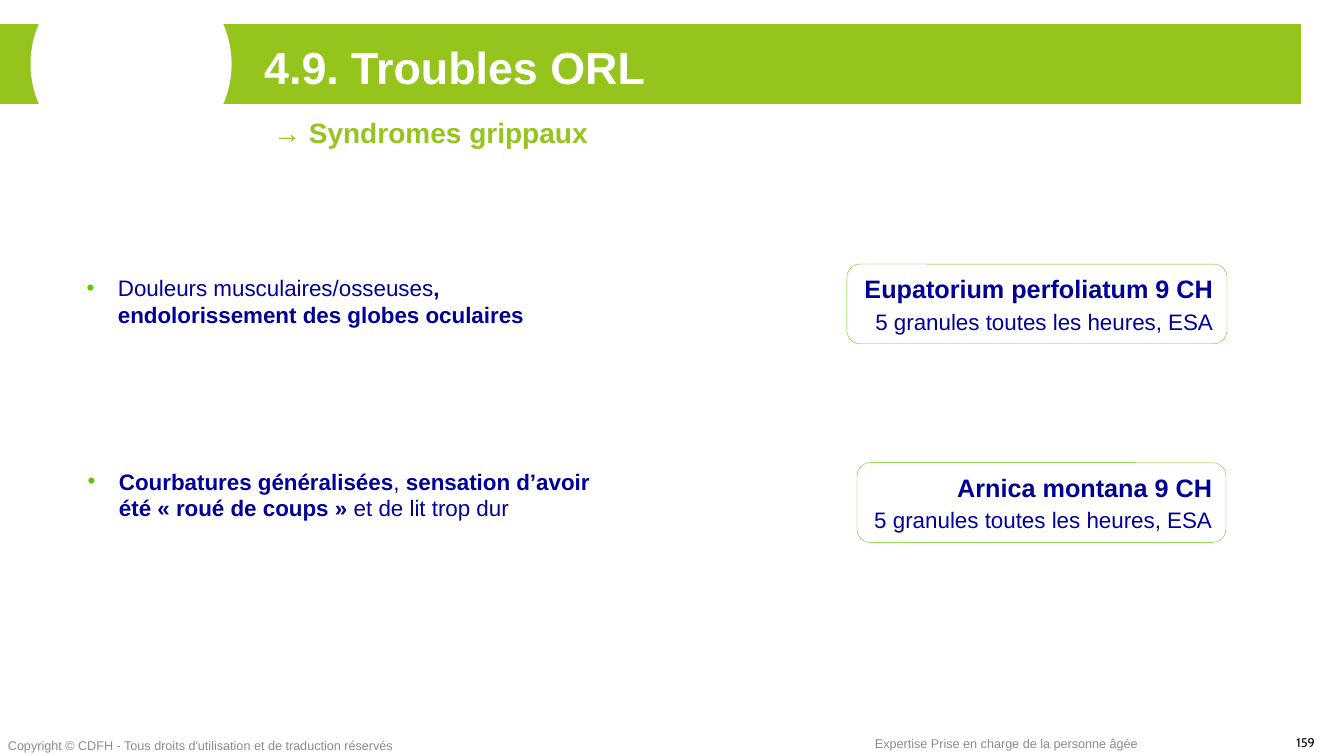
from lxml import etree
from pptx import Presentation
from pptx.dml.color import RGBColor
from pptx.enum.shapes import MSO_SHAPE
from pptx.enum.text import MSO_ANCHOR, MSO_AUTO_SIZE, PP_ALIGN
from pptx.oxml.ns import qn
from pptx.util import Inches, Pt

RECT, OVAL, ROUNDED = MSO_SHAPE.RECTANGLE, MSO_SHAPE.OVAL, MSO_SHAPE.ROUNDED_RECTANGLE
LEFT, RIGHT = PP_ALIGN.LEFT, PP_ALIGN.RIGHT
TOP, MIDDLE = MSO_ANCHOR.TOP, MSO_ANCHOR.MIDDLE
NO_AUTOFIT = MSO_AUTO_SIZE.NONE

COLORS = {"band": "95C41D", "accent": "62C400", "text": "000099",
          "footer": "8C8C8C", "white": "FFFFFF", "black": "000000"}
SLIDE_W, SLIDE_H = 13.33, 7.5
TWO_CONTENT = 3
HANGING = 0.31
DOSE = "5 granules toutes les heures, ESA"

# Each row: top of the symptom, its box, its runs (text, bold), then the remedy and its box
ROWS = [
    {"symptom": [("Douleurs musculaires/osseuses", False),
                 (", endolorissement des globes oculaires", True)],
     "symptom_box": (0.76, 2.67, 4.72, 0.64),
     "remedy": "Eupatorium perfoliatum 9 CH",
     "remedy_box": (8.4, 2.62, 3.77, 0.79)},
    {"symptom": [("Courbatures généralisées", True), (", ", False),
                 ("sensation d’avoir été « roué de coups » ", True),
                 ("et de lit trop dur", False)],
     "symptom_box": (0.77, 4.59, 5.44, 0.64),
     "remedy": "Arnica montana 9 CH",
     "remedy_box": (8.5, 4.59, 3.66, 0.79)},
]


def rgb(name):
    return RGBColor.from_string(COLORS[name])


def place(part, box):
    part.left, part.top, part.width, part.height = (Inches(v) for v in box)


def add_bullet(paragraph):
    properties = paragraph._p.get_or_add_pPr()
    properties.set("marL", str(Inches(HANGING)))
    properties.set("indent", str(-Inches(HANGING)))
    color = etree.SubElement(properties, qn("a:buClr"))
    etree.SubElement(color, qn("a:srgbClr"), val=COLORS["accent"])
    etree.SubElement(properties, qn("a:buFont"), typeface="Arial")
    etree.SubElement(properties, qn("a:buChar"), char="•")


def write(frame, runs, size=16, color="text", font="Arial", align=LEFT, anchor=TOP,
          wrap=True, bullet=False, before=0, spacing=1.0, new_paragraph=False):
    """Write runs of (text, bold) as one paragraph of the frame."""
    frame.auto_size = NO_AUTOFIT
    frame.word_wrap = wrap
    frame.vertical_anchor = anchor
    paragraph = frame.add_paragraph() if new_paragraph else frame.paragraphs[0]
    if bullet:
        add_bullet(paragraph)
    paragraph.alignment = align
    paragraph.space_before = Pt(before)
    paragraph.line_spacing = spacing
    for text, bold in runs:
        run = paragraph.add_run()
        run.text = text
        run.font.name, run.font.size, run.font.bold = font, Pt(size), bold
        run.font.color.rgb = rgb(color)


def add_panel(slide, kind, box, line, line_width, fill=None):
    panel = slide.shapes.add_shape(kind, *(Inches(v) for v in box))
    panel.shadow.inherit = False
    if fill:
        panel.fill.solid()
        panel.fill.fore_color.rgb = rgb(fill)
    else:
        panel.fill.background()
    panel.line.color.rgb = rgb(line)
    panel.line.width = Pt(line_width)
    return panel


def add_label(slide, box, text, bold=False, **style):
    label = slide.shapes.add_textbox(*(Inches(v) for v in box))
    write(label.text_frame, [(text, bold)], **style)


def add_header(slide, box):
    left, top, width, height = box
    add_panel(slide, RECT, box, "white", 1, fill="band")
    disc = 1.98
    add_panel(slide, OVAL, (left + 0.33, top + (height - disc) / 2, disc, disc),
              "white", 1, fill="white")
    title = slide.shapes.title
    slide.shapes._spTree.append(title._element)  # bring the title above the band
    place(title, (left + 2.54, top + 0.17, 8.23, 0.62))
    write(title.text_frame, [("4.9. Troubles ORL", True)], size=32, color="white", spacing=0.9)
    add_label(slide, (left + 2.63, top + 0.87, 7.73, 0.44), "→ Syndromes grippaux",
              bold=True, size=20, color="band")


def add_row(slide, body, row):
    place(body, row["symptom_box"])
    write(body.text_frame, row["symptom"], bullet=True)
    frame = add_panel(slide, ROUNDED, row["remedy_box"], "accent", 0.25).text_frame
    write(frame, [(row["remedy"], True)], size=18, align=RIGHT, anchor=MIDDLE, wrap=False)
    write(frame, [(DOSE, False)], align=RIGHT, anchor=MIDDLE, wrap=False,
          before=3, new_paragraph=True)


def add_footer(slide, box):
    left, top, width, height = box
    add_label(slide, (left - 0.02, top + 0.03, width / 2, height),
              "Copyright © CDFH - Tous droits d'utilisation et de traduction réservés",
              size=9, color="footer")
    add_label(slide, (left + 8.58, top + 0.01, 2.83, height),
              "Expertise Prise en charge de la personne âgée",
              size=9, color="footer", wrap=False)
    add_label(slide, (left + 12.76, top, 0.57, height), "159",
              size=9, color="black", font="Cabin")


def main():
    deck = Presentation()
    deck.slide_width, deck.slide_height = Inches(SLIDE_W), Inches(SLIDE_H)
    slide = deck.slides.add_slide(deck.slide_layouts[TWO_CONTENT])
    add_header(slide, (-0.02, 0.23, 12.93, 0.81))
    for body, row in zip((slide.placeholders[1], slide.placeholders[2]), ROWS):
        add_row(slide, body, row)
    add_footer(slide, (0, 7.24, SLIDE_W, 0.25))
    deck.save("out.pptx")


if __name__ == "__main__":
    main()
